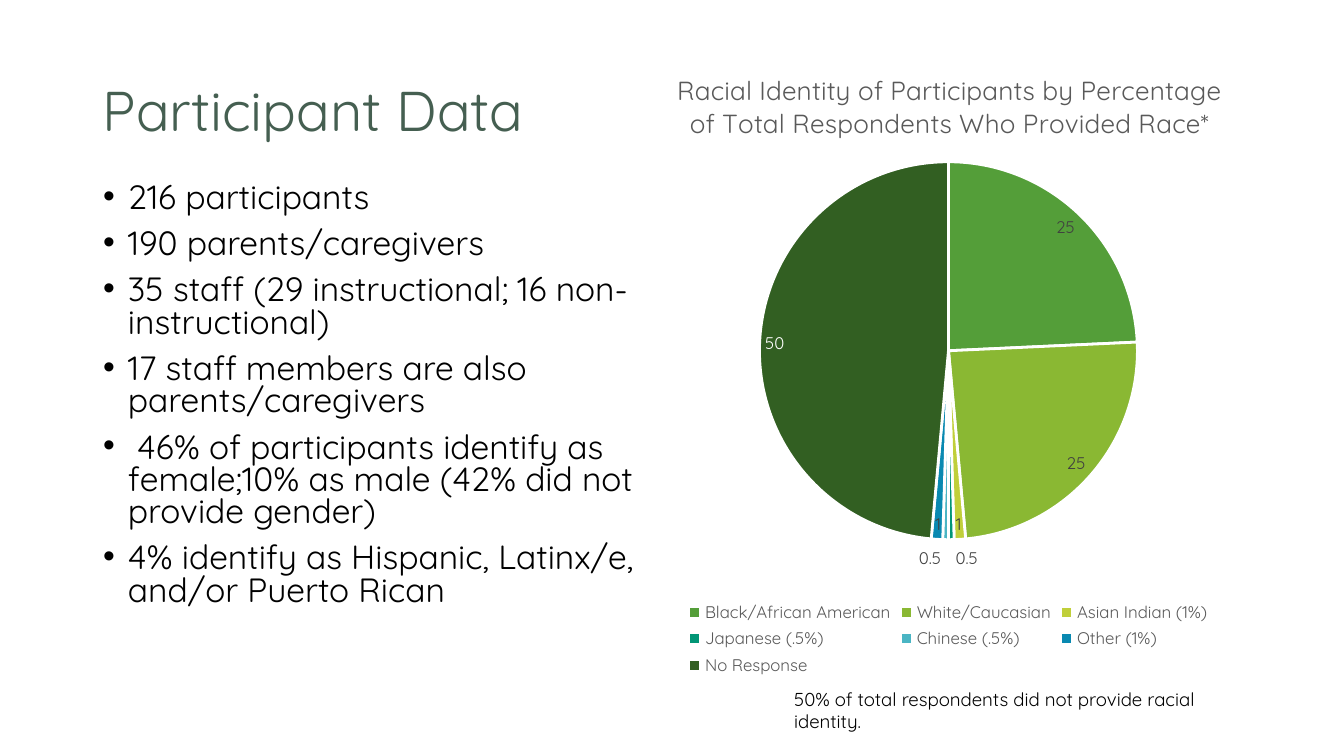
from lxml import etree
from pptx import Presentation
from pptx.chart.data import CategoryChartData
from pptx.dml.color import RGBColor
from pptx.enum.chart import XL_CHART_TYPE, XL_LABEL_POSITION, XL_LEGEND_POSITION
from pptx.enum.text import MSO_ANCHOR
from pptx.oxml.ns import qn
from pptx.util import Emu, Pt

PIE = XL_CHART_TYPE.PIE
BEST_FIT = XL_LABEL_POSITION.BEST_FIT
BOTTOM = XL_LEGEND_POSITION.BOTTOM
MIDDLE, TOP = MSO_ANCHOR.MIDDLE, MSO_ANCHOR.TOP

WIDTH, HEIGHT = 1344, 756
EMU_PER_PX = 9144000 / WIDTH

BLACK = RGBColor(0x00, 0x00, 0x00)
WHITE = RGBColor(0xFF, 0xFF, 0xFF)
PINE = RGBColor(0x45, 0x5F, 0x51)
GRAY = RGBColor(0x59, 0x59, 0x59)
CHARCOAL = RGBColor(0x40, 0x40, 0x40)

FACTS = [
    "216 participants",
    "190 parents/caregivers",
    "35 staff (29 instructional; 16 non-instructional)",
    "17 staff members are also parents/caregivers",
    " 46% of participants identify as female;10% as male (42% did not provide gender)",
    "4% identify as Hispanic, Latinx/e, and/or Puerto Rican",
]
RACES = [
    ("Black/African American", 25, RGBColor(0x54, 0x9E, 0x39)),
    ("White/Caucasian", 25, RGBColor(0x8A, 0xB8, 0x33)),
    ("Asian Indian (1%)", 1, RGBColor(0xC0, 0xCF, 0x3A)),
    ("Japanese (.5%)", 0.5, RGBColor(0x02, 0x96, 0x76)),
    ("Chinese (.5%)", 0.5, RGBColor(0x4A, 0xB5, 0xC4)),
    ("Other (1%)", 1, RGBColor(0x09, 0x89, 0xB1)),
    ("No Response", 50, RGBColor(0x32, 0x5F, 0x22)),
]
CHART_TITLE = ("Racial Identity of Participants by Percentage "
               "of Total Respondents Who Provided Race*")


def px(length):
    return Emu(round(length * EMU_PER_PX))


def apply(target, values):
    for name, value in values.items():
        setattr(target, name, value)


def manual_layout(**fractions):
    """Return a c:layout element; fractions are of the chart's size."""
    layout = etree.Element(qn("c:layout"))
    manual = etree.SubElement(layout, qn("c:manualLayout"))
    settings = {"xMode": "edge", "yMode": "edge", **fractions}
    if "w" in fractions:
        settings = {"layoutTarget": "inner", **settings}
    for name, value in settings.items():
        etree.SubElement(manual, qn(f"c:{name}")).set("val", str(value))
    return layout


def place(parent, layout, index):
    for old in parent.findall(qn("c:layout")):
        parent.remove(old)
    parent.insert(index, layout)


class SlideBuilder:
    font_name = "Quicksand"

    def __init__(self, slide):
        self.slide = slide

    def style(self, font, size, color):
        apply(font, {"name": self.font_name, "size": Pt(size), "bold": False})
        font.color.rgb = color

    def text(self, box, lines, size, color, frame_format, paragraph_format=None):
        frame = self.slide.shapes.add_textbox(*map(px, box)).text_frame
        apply(frame, {"word_wrap": True, **frame_format})
        for index, line in enumerate(lines):
            paragraph = frame.add_paragraph() if index else frame.paragraphs[0]
            apply(paragraph, paragraph_format or {})
            run = paragraph.add_run()
            run.text = line
            self.style(run.font, size, color)
        return frame

    def bullets(self, box, lines, size, color, frame_format, paragraph_format):
        frame = self.text(box, lines, size, color, frame_format, paragraph_format)
        indent = px(25)
        for paragraph in frame.paragraphs:
            properties = paragraph._p.get_or_add_pPr()
            properties.set("marL", str(indent))
            properties.set("indent", str(-indent))
            etree.SubElement(properties, qn("a:buFont")).set("typeface", "Arial")
            etree.SubElement(properties, qn("a:buChar")).set("char", "•")

    def pie(self, box, title, slices):
        names, values, colors = zip(*slices)
        data = CategoryChartData()
        data.categories = names
        data.add_series("Series 1", values)
        chart = self.slide.shapes.add_chart(PIE, *map(px, box), data).chart
        self.style(chart.font, 10, BLACK)

        chart.has_title = True
        heading = chart.chart_title.text_frame.paragraphs[0].add_run()
        heading.text = title
        self.style(heading.font, 14, GRAY)
        place(chart.chart_title._element, manual_layout(x=0.12, y=0.04), 1)

        chart.has_legend = True
        apply(chart.legend, {"position": BOTTOM, "include_in_layout": False})
        self.style(chart.legend.font, 9, GRAY)

        plot = chart.plots[0]
        apply(plot, {"vary_by_categories": True, "has_data_labels": True})
        apply(plot.data_labels, {"show_value": True, "show_percentage": False,
                                 "position": BEST_FIT})
        self.style(plot.data_labels.font, 9, CHARCOAL)
        place(chart._chartSpace.chart.plotArea,
              manual_layout(x=0.24, y=0.19, w=0.52, h=0.59), 0)

        points = plot.series[0].points
        for index, color in enumerate(colors):
            point = points[index]
            point.format.fill.solid()
            point.format.fill.fore_color.rgb = color
            point.format.line.color.rgb = WHITE
            point.format.line.width = Pt(1.5)
            label = point.data_label
            is_last = index == len(colors) - 1
            self.style(label.font, 9, WHITE if is_last else CHARCOAL)
            label.position = BEST_FIT


def main():
    presentation = Presentation()
    apply(presentation, {"slide_width": px(WIDTH), "slide_height": px(HEIGHT)})
    blank = presentation.slide_layouts[6]
    builder = SlideBuilder(presentation.slides.add_slide(blank))

    insets = {"margin_left": px(10), "margin_right": px(10),
              "margin_top": px(5), "margin_bottom": px(5),
              "vertical_anchor": MIDDLE}
    builder.text((93, 40, 1159, 146), ["Participant Data"], 30, PINE,
                 insets, {"line_spacing": 0.9})
    builder.bullets((93, 202, 571, 480), FACTS, 18, BLACK,
                    {**insets, "margin_bottom": px(97)},
                    {"line_spacing": 0.8, "space_before": Pt(7.5)})
    builder.pie((585, 40, 727, 641), CHART_TITLE, RACES)
    builder.text((781, 681, 470, 59),
                 ["50% of total respondents did not provide racial identity."],
                 10, BLACK, {"vertical_anchor": TOP})

    presentation.save("out.pptx")


if __name__ == "__main__":
    main()
